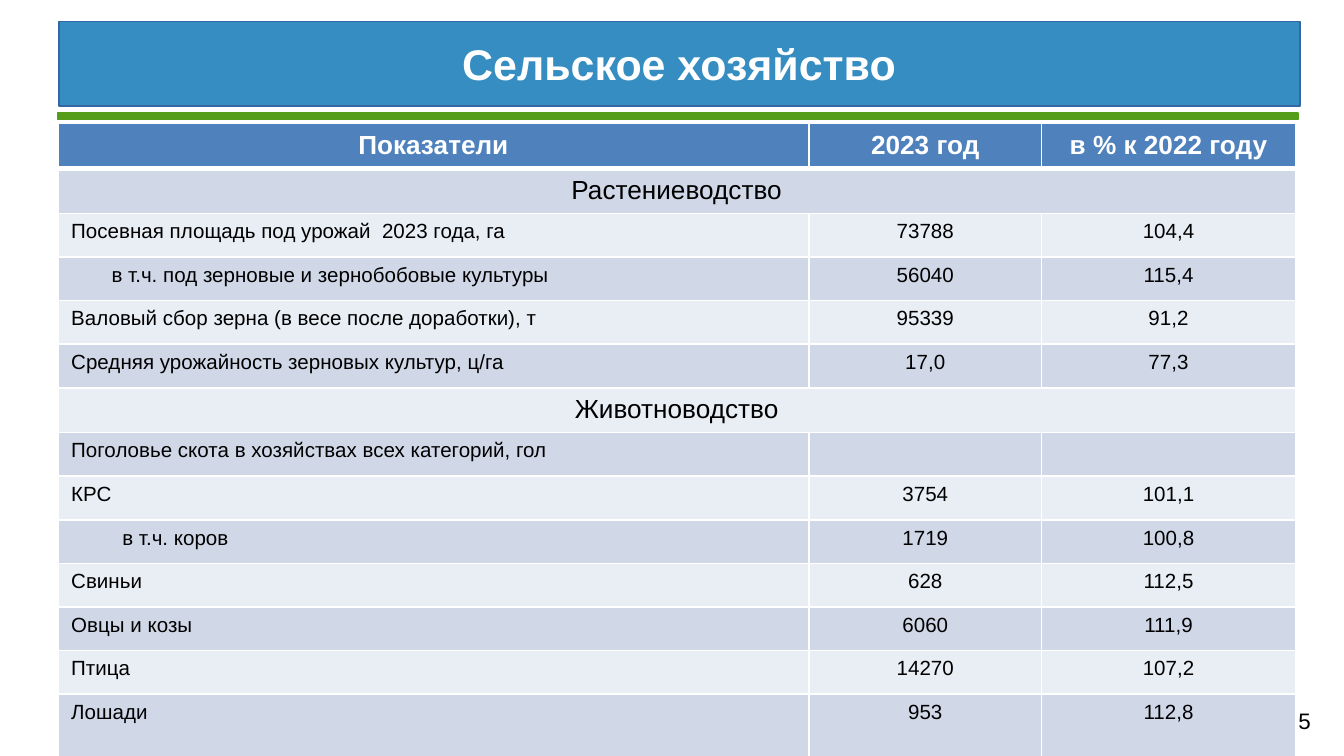
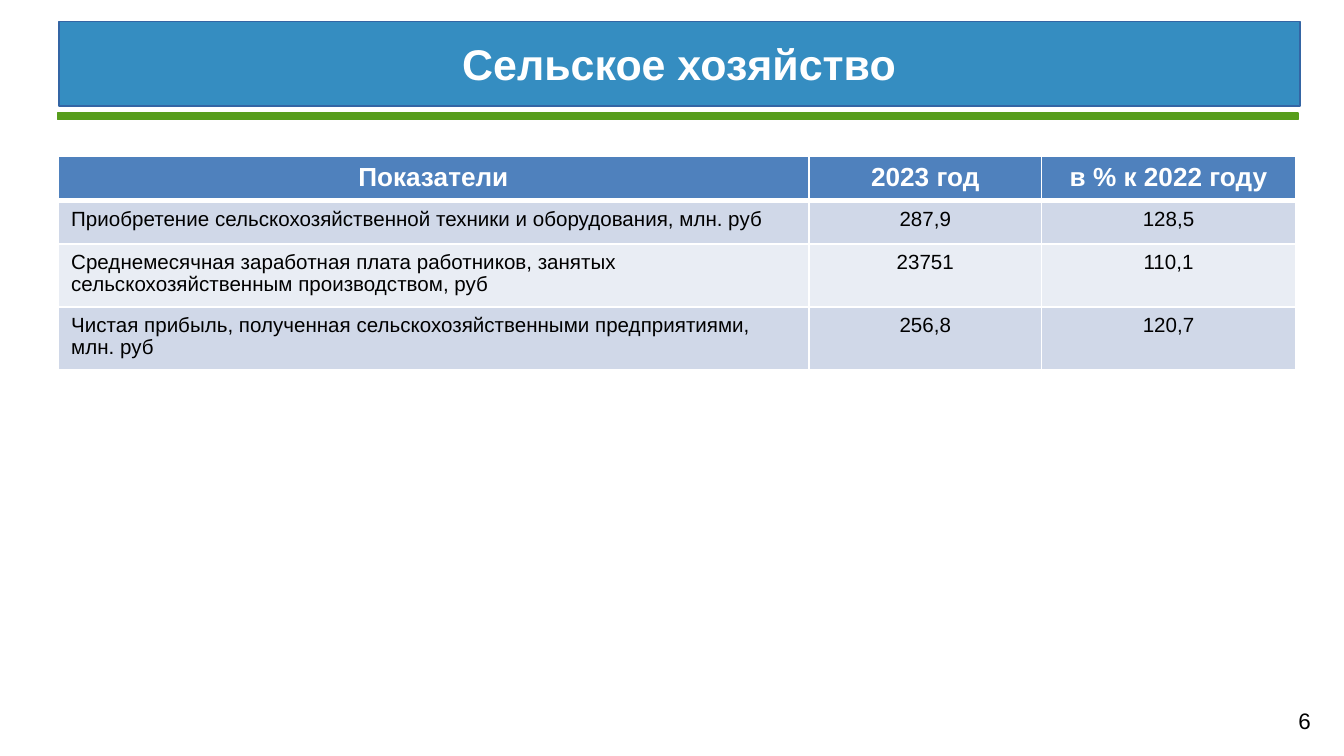
from dataclasses import dataclass

from lxml import etree
from pptx import Presentation
from pptx.dml.color import RGBColor
from pptx.enum.shapes import MSO_SHAPE
from pptx.enum.text import MSO_ANCHOR, PP_ALIGN
from pptx.oxml.ns import qn
from pptx.util import Inches, Pt

CENTER, LEFT = PP_ALIGN.CENTER, PP_ALIGN.LEFT
MIDDLE = MSO_ANCHOR.MIDDLE
RECTANGLE = MSO_SHAPE.RECTANGLE

FONT = "Arial"
WHITE, BLACK = "FFFFFF", "000000"
TITLE_FILL, TITLE_LINE = "358DC1", "3465A4"
GREEN, HEADER_FILL = "579D1C", "4F81BD"
BANDS = ("D0D8E8", "E9EDF4")
COLUMN_WIDTHS = (5.59, 1.73, 1.89)
CELL_MARGIN = 0.1


@dataclass(frozen=True)
class Row:
    label: str
    value: str = ""
    percent: str = ""
    indent: float = 0
    section: bool = False


@dataclass(frozen=True)
class TablePage:
    number: int
    top: float
    heights: tuple[float, ...]
    rows: tuple[Row, ...]


HEADER = Row("Показатели", "2023 год", "в % к 2022 году")
PRODUCTION = (
    Row("Растениеводство", section=True),
    Row("Посевная площадь под урожай  2023 года, га", "73788", "104,4"),
    Row("в т.ч. под зерновые и зернобобовые культуры", "56040", "115,4", 0.3),
    Row("Валовый сбор зерна (в весе после доработки), т", "95339", "91,2"),
    Row("Средняя урожайность зерновых культур, ц/га", "17,0", "77,3"),
    Row("Животноводство", section=True),
    Row("Поголовье скота в хозяйствах всех категорий, гол"),
    Row("КРС", "3754", "101,1"),
    Row("в т.ч. коров", "1719", "100,8", 0.38),
    Row("Свиньи", "628", "112,5"),
    Row("Овцы и козы", "6060", "111,9"),
    Row("Птица", "14270", "107,2"),
    Row("Лошади", "953", "112,8"),
)
FINANCE = (
    Row("Приобретение сельскохозяйственной техники и оборудования, млн. руб",
        "287,9", "128,5"),
    Row("Среднемесячная заработная плата работников, занятых "
        "сельскохозяйственным производством, руб", "23751", "110,1"),
    Row("Чистая прибыль, полученная сельскохозяйственными предприятиями, "
        "млн. руб", "256,8", "120,7"),
)
LAST_ROW = 0.49
EQUAL_ROW = (4.71 - LAST_ROW) / len(PRODUCTION)
PAGES = (
    TablePage(5, 0.92, (EQUAL_ROW,) * len(PRODUCTION) + (LAST_ROW,), PRODUCTION),
    TablePage(6, 1.16, (0.33, 0.32, 0.47, 0.47), FINANCE),
)


def color(value: str) -> RGBColor:
    return RGBColor.from_string(value)


def paint(shape, fill: str, line: str, width: float) -> None:
    shape.fill.solid()
    shape.fill.fore_color.rgb = color(fill)
    shape.line.color.rgb = color(line)
    shape.line.width = Pt(width)


def set_margins(frame, side: float, edge: float) -> None:
    frame.margin_left = frame.margin_right = Inches(side)
    frame.margin_top = frame.margin_bottom = Inches(edge)


def write(para, text: str, size: int, ink: str, bold: bool = False,
          align=LEFT) -> None:
    if text:
        para.add_run().text = text
    else:
        etree.SubElement(para._p, qn("a:endParaRPr"), sz=str(size * 100))
    para.alignment = align
    font = para.font
    font.name, font.size, font.bold = FONT, Pt(size), bold
    font.color.rgb = color(ink)


def set_borders(cell, top: float, bottom: float) -> None:
    properties = cell._tc.get_or_add_tcPr()
    for side, width in (("L", 1), ("R", 1), ("T", top), ("B", bottom)):
        line = etree.SubElement(properties, qn(f"a:ln{side}"), w=str(Pt(width)))
        fill = etree.SubElement(line, qn("a:solidFill"))
        etree.SubElement(fill, qn("a:srgbClr"), val=WHITE)


def add_frame(page, number: int) -> None:
    title = page.shapes.title
    title.left, title.top = Inches(0.44), Inches(0.16)
    title.width, title.height = Inches(9.23), Inches(0.63)
    paint(title, TITLE_FILL, TITLE_LINE, 1)
    frame = title.text_frame
    frame.vertical_anchor = MIDDLE
    set_margins(frame, 0.08, 0.04)
    write(frame.paragraphs[0], "Сельское хозяйство", 23, WHITE, True, CENTER)

    number_box = page.shapes.add_textbox(
        Inches(9.57), Inches(5.22), Inches(0.31), Inches(0.28))
    set_margins(number_box.text_frame, 0.09, 0.04)
    write(number_box.text_frame.paragraphs[0], str(number), 12, BLACK)

    band = page.shapes.add_shape(
        RECTANGLE, Inches(0.43), Inches(0.84), Inches(9.23), Inches(0.05))
    band.shadow.inherit = False
    paint(band, GREEN, GREEN, 0.75)


def add_indicators(page, content: TablePage) -> None:
    rows = (HEADER, *content.rows)
    table = page.shapes.add_table(
        len(rows), len(COLUMN_WIDTHS), Inches(0.43), Inches(content.top),
        Inches(sum(COLUMN_WIDTHS)), Inches(sum(content.heights))).table
    for column, width in zip(table.columns, COLUMN_WIDTHS):
        column.width = Inches(width)
    for index, (row, height) in enumerate(zip(rows, content.heights)):
        table.rows[index].height = Inches(height)
        is_header = index == 0
        size = 14 if is_header or row.section else 11
        for column, text in enumerate((row.label, row.value, row.percent)):
            cell = table.cell(index, column)
            set_borders(cell, 3 if index == 1 else 1, 3 if is_header else 1)
            cell.fill.solid()
            cell.fill.fore_color.rgb = color(
                HEADER_FILL if is_header else BANDS[(index - 1) % 2])
            centered = is_header or row.section or column > 0
            write(cell.text_frame.paragraphs[0], text, size,
                  WHITE if is_header else BLACK, is_header,
                  CENTER if centered else LEFT)
        if row.indent:
            table.cell(index, 0).margin_left = Inches(CELL_MARGIN + row.indent)
        if row.section:
            table.cell(index, 0).merge(table.cell(index, len(COLUMN_WIDTHS) - 1))


def main() -> None:
    deck = Presentation()
    deck.slide_width = Inches(10)
    deck.slide_height = deck.slide_width * 9 // 16
    for content in PAGES:
        page = deck.slides.add_slide(deck.slide_layouts[5])
        add_frame(page, content.number)
        add_indicators(page, content)
    deck.save("out.pptx")


if __name__ == "__main__":
    main()
